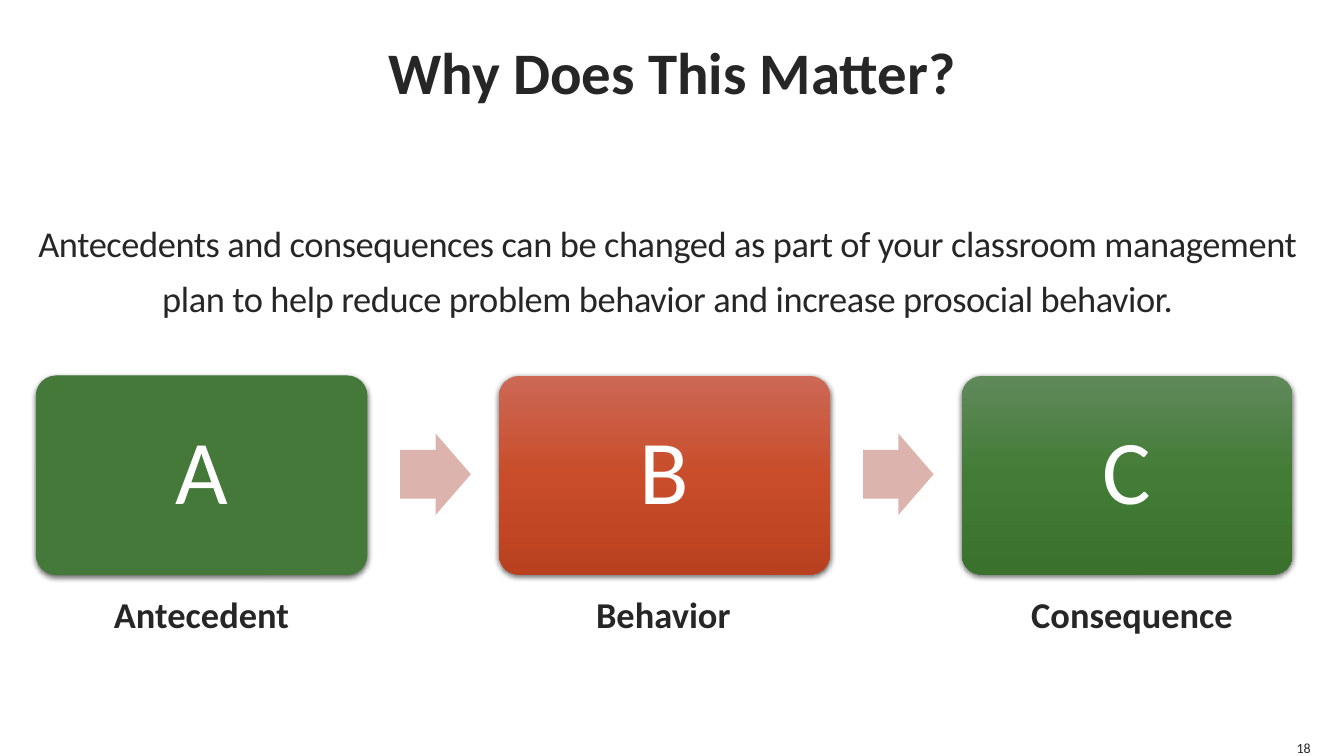
from dataclasses import dataclass

from lxml.etree import SubElement
from pptx import Presentation
from pptx.dml.color import RGBColor
from pptx.enum.shapes import MSO_SHAPE
from pptx.enum.text import MSO_ANCHOR, PP_ALIGN
from pptx.oxml.ns import qn
from pptx.util import Inches, Pt


@dataclass(frozen=True)
class Theme:
    font: str = "Calibri"
    ink: str = "262626"
    white: str = "FFFFFF"
    arrow: str = "DDB3AE"
    shadow: str = "000000"
    antecedent: tuple = ("447939",)
    behavior: tuple = ("CC6855", "C94D2A", "B9411F")
    consequence: tuple = ("60895A", "427C36", "39712D")
    title_size: int = 42
    body_size: int = 26
    letter_size: int = 65
    number_size: int = 10


class SlideBuilder:
    def __init__(self, page, theme):
        self.page = page
        self.theme = theme

    def set_text(self, shape, text, size, color, bold=False, align=PP_ALIGN.CENTER,
                 anchor=MSO_ANCHOR.MIDDLE, wrap=True, line_spacing=None, tracking=None):
        frame = shape.text_frame
        frame.margin_left = frame.margin_right = frame.margin_top = frame.margin_bottom = 0
        frame.word_wrap = wrap
        frame.vertical_anchor = anchor
        frame.text = text
        para = frame.paragraphs[0]
        para.alignment = align
        para.line_spacing = line_spacing
        span = para.runs[0]
        span.font.name = self.theme.font
        span.font.size = Pt(size)
        span.font.bold = bold
        span.font.color.rgb = RGBColor.from_string(color)
        if tracking is not None:
            span.font._element.set("spc", str(round(tracking * 100)))

    def text(self, left, top, width, height, text, size, **style):
        box = self.page.shapes.add_textbox(
            Inches(left), Inches(top), Inches(width), Inches(height))
        self.set_text(box, text, size, self.theme.ink, **style)

    def shape(self, kind, left, top, width, height, adjustments):
        shape = self.page.shapes.add_shape(
            kind, Inches(left), Inches(top), Inches(width), Inches(height))
        for index, value in enumerate(adjustments):
            shape.adjustments[index] = value
        shape.line.fill.background()
        shape.shadow.inherit = False
        return shape

    def card(self, left, top, width, height, letter, colors):
        card = self.shape(MSO_SHAPE.ROUNDED_RECTANGLE, left, top, width, height, [0.1])
        if len(colors) == 1:
            solid = RGBColor.from_string(colors[0])
            card.fill.solid()
            card.fill.fore_color.rgb = solid
            card.line.color.rgb = solid
            card.line.width = Pt(0.75)
        else:
            self.gradient(card, colors)
        self.cast_shadow(card)
        self.set_text(card, letter, self.theme.letter_size, self.theme.white, line_spacing=0.9)

    def gradient(self, shape, colors):
        shape.fill.gradient()
        shape.fill.gradient_angle = 270
        stops = shape._element.spPr.find(".//" + qn("a:gsLst"))
        for stop in list(stops):
            stops.remove(stop)
        for index, color in enumerate(colors):
            position = 100000 * index // (len(colors) - 1)
            stop = SubElement(stops, qn("a:gs"), pos=str(position))
            SubElement(stop, qn("a:srgbClr"), val=color)

    def cast_shadow(self, shape):
        effects = shape._element.spPr.find(qn("a:effectLst"))
        shadow = SubElement(effects, qn("a:outerShdw"), blurRad=str(Pt(4.5)),
                            dist=str(Pt(1.5)), dir="5400000", rotWithShape="0")
        color = SubElement(shadow, qn("a:srgbClr"), val=self.theme.shadow)
        SubElement(color, qn("a:alpha"), val="63000")

    def arrow(self, left, top, width, height):
        arrow = self.shape(MSO_SHAPE.RIGHT_ARROW, left, top, width, height, [0.6, 0.5])
        arrow.fill.solid()
        arrow.fill.fore_color.rgb = RGBColor.from_string(self.theme.arrow)


def main():
    deck = Presentation()
    deck.slide_width = Inches(13.33)
    deck.slide_height = Inches(7.5)
    theme = Theme()
    builder = SlideBuilder(deck.slides.add_slide(deck.slide_layouts[6]), theme)

    builder.text(0, 0, 13.33, 1.4, "Why Does This Matter?", theme.title_size, bold=True)
    builder.text(
        0.35, 2.09, 12.54, 1.3,
        "Antecedents and consequences can be changed as part of your classroom management "
        "plan to help reduce problem behavior and increase prosocial behavior.",
        theme.body_size, anchor=MSO_ANCHOR.TOP, line_spacing=1.25, tracking=-0.3)

    first_left, pitch, card_width = 0.36, 4.59, 3.28
    steps = [
        ("A", "Antecedent", theme.antecedent, 2.0),
        ("B", "Behavior", theme.behavior, 6.58),
        ("C", "Consequence", theme.consequence, 11.23),
    ]
    label_width = 2.74
    for index, (letter, label, colors, label_center) in enumerate(steps):
        left = first_left + index * pitch
        builder.card(left, 3.73, card_width, 1.97, letter, colors)
        if index < len(steps) - 1:
            builder.arrow(left + card_width + 0.33, 4.3, 0.7, 0.81)
        builder.text(label_center - label_width / 2, 5.82, label_width, 0.54,
                     label, theme.body_size, bold=True)

    builder.text(12.83, 7.33, 0.17, 0.17, "18", theme.number_size,
                 align=PP_ALIGN.RIGHT, anchor=MSO_ANCHOR.BOTTOM, wrap=False)
    deck.save("out.pptx")


if __name__ == "__main__":
    main()
